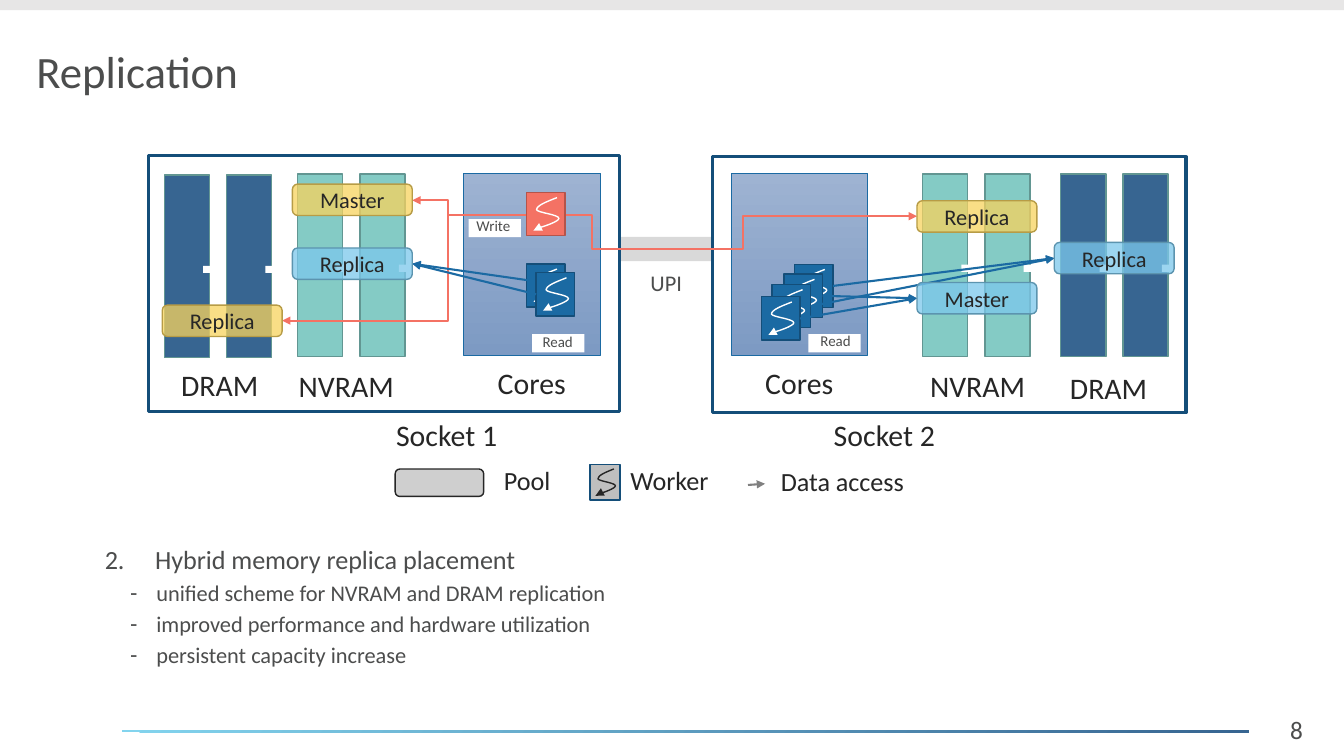
from dataclasses import dataclass
from typing import Optional

from lxml.etree import SubElement
from pptx import Presentation
from pptx.dml.color import RGBColor
from pptx.enum.shapes import MSO_CONNECTOR as Link, MSO_SHAPE as Preset
from pptx.enum.text import MSO_ANCHOR as Anchor, MSO_AUTO_SIZE as AutoSize, PP_ALIGN as Align
from pptx.oxml.ns import qn
from pptx.util import Cm, Pt

FONT = "Calibri"
WHITE = RGBColor(0xFF, 0xFF, 0xFF)
BLACK = RGBColor(0x26, 0x26, 0x26)
TEXT_GREY = RGBColor(0x4C, 0x4D, 0x4D)
BAR_GREY = RGBColor(0xE7, 0xE6, 0xE6)
LINK_GREY = RGBColor(0xD9, 0xD9, 0xD9)
LEGEND_GREY = RGBColor(0xBF, 0xBF, 0xBF)
ARROW_GREY = RGBColor(0x80, 0x80, 0x80)
NAVY = RGBColor(0x14, 0x4E, 0x79)
BLUE = RGBColor(0x1B, 0x6A, 0xA3)
DRAM_BLUE = RGBColor(0x37, 0x65, 0x91)
NVRAM_GREEN = RGBColor(0x84, 0xCB, 0xC5)
MODULE_EDGE = RGBColor(0x62, 0x96, 0x92)
CORE_TOP = RGBColor(0x9E, 0xB3, 0xD2)
CORE_BOTTOM = RGBColor(0x7D, 0x9A, 0xC3)
FOOTER_LIGHT = RGBColor(0x83, 0xD4, 0xEE)
RED = RGBColor(0xF4, 0x72, 0x64)
RED_EDGE = RGBColor(0xB5, 0x54, 0x4A)
YELLOW = RGBColor(0xF8, 0xD3, 0x5E)
YELLOW_EDGE = RGBColor(0xB7, 0x9C, 0x46)
SKY = RGBColor(0x7C, 0xC8, 0xEC)
SKY_EDGE = RGBColor(0x5C, 0x94, 0xAF)

# Squiggle inside a worker: Bezier points as fractions of its box
SQUIGGLE = [(.79, .12), (.53, .21), (.26, .3), (.26, .4), (.29, .47),
            (.84, .51), (.84, .6), (.84, .67), (.45, .79), (.34, .81)]
SQUIGGLE_TIP = (.18, .88)


@dataclass
class Label:
    text: str
    x: float
    y: float
    width: float
    height: float = 1.17
    size: float = 21.33
    color: RGBColor = BLACK
    align: Align = Align.CENTER


@dataclass
class Pool:
    text: str
    x: float
    y: float
    fill: RGBColor
    edge: RGBColor
    width: float = 3.02
    height: float = 0.79


@dataclass
class Worker:
    x: float
    y: float
    fill: RGBColor = BLUE
    edge: RGBColor = NAVY
    ink: RGBColor = WHITE
    arrow: bool = True
    width: float = 0.97
    height: float = 1.09
    pool: Optional[int] = None  # index of the pool it reads
    side: int = 3


@dataclass
class Route:
    start: tuple[float, float]
    end: tuple[float, float]
    bend: Optional[float] = None
    arrow: bool = True
    color: RGBColor = RED


def add_run(paragraph, text: str, size: float, color: RGBColor) -> None:
    run = paragraph.add_run()
    run.text = text
    run.font.name, run.font.size = FONT, Pt(size)
    run.font.color.rgb = color


def add_box(x: float, y: float, width: float, height: float, fill=None, edge=None,
            weight: float = 1, preset=Preset.RECTANGLE):
    shape = slide.shapes.add_shape(preset, Cm(x), Cm(y), Cm(width), Cm(height))
    shape.shadow.inherit = False
    if fill is None:
        shape.fill.background()
    else:
        shape.fill.solid()
        shape.fill.fore_color.rgb = fill
    if edge is None:
        shape.line.fill.background()
    else:
        shape.line.color.rgb, shape.line.width = edge, Pt(weight)
    return shape


def set_gradient(shape, first: RGBColor, last: RGBColor, angle: float) -> None:
    shape.fill.gradient()
    shape.fill.gradient_angle = angle
    for stop, color in zip(shape.fill.gradient_stops, (first, last)):
        stop.color.rgb = color


def add_label(label: Label) -> None:
    box = slide.shapes.add_textbox(Cm(label.x), Cm(label.y), Cm(label.width), Cm(label.height))
    box.text_frame.word_wrap = True
    paragraph = box.text_frame.paragraphs[0]
    paragraph.alignment = label.align
    add_run(paragraph, label.text, label.size, label.color)


def add_pool(pool: Pool):
    shape = add_box(pool.x, pool.y, pool.width, pool.height, pool.fill, pool.edge,
                    preset=Preset.ROUNDED_RECTANGLE)
    color = shape.fill._xPr.find(qn("a:solidFill"))[0]
    SubElement(color, qn("a:alpha"), val="75000")
    if pool.text:
        shape.text_frame.vertical_anchor = Anchor.MIDDLE
        shape.text_frame.paragraphs[0].alignment = Align.CENTER
        add_run(shape.text_frame.paragraphs[0], pool.text, 16, BLACK)
    return shape


def add_route(route: Route, weight: float = 1.5):
    kind = Link.STRAIGHT if route.bend is None else Link.ELBOW
    connector = slide.shapes.add_connector(kind, *map(Cm, route.start + route.end))
    connector.line.color.rgb, connector.line.width = route.color, Pt(weight)
    properties = connector._element.spPr
    if route.arrow:
        SubElement(properties.find(qn("a:ln")), qn("a:tailEnd"), type="triangle")
    if route.bend is not None:
        guides = properties.find(qn("a:prstGeom")).find(qn("a:avLst"))
        SubElement(guides, qn("a:gd"), name="adj1", fmla=f"val {round(route.bend * 100000)}")
    SubElement(properties, qn("a:effectLst"))
    return connector


def add_curve(points: list):
    """Draw an open curve: a start, then three Bezier points a segment."""
    start, *rest = [(Cm(x), Cm(y)) for x, y in points]
    builder = slide.shapes.build_freeform(*start)
    builder.add_line_segments(rest, close=False)
    curve = builder.convert_to_shape()
    outline = next(curve._element.iter(qn("a:path")))
    segments = outline.findall(qn("a:lnTo"))
    for first in range(0, len(segments), 3):
        bezier = SubElement(outline, qn("a:cubicBezTo"))
        for segment in segments[first:first + 3]:
            bezier.append(segment[0])
            outline.remove(segment)
    curve.shadow.inherit = False
    curve.fill.background()
    return curve


def add_worker(worker: Worker):
    def place(point: tuple) -> tuple[float, float]:
        return worker.x + point[0] * worker.width, worker.y + point[1] * worker.height

    box = add_box(worker.x, worker.y, worker.width, worker.height, worker.fill, worker.edge)
    squiggle = add_curve([place(point) for point in SQUIGGLE])
    squiggle.line.color.rgb, squiggle.line.width = worker.ink, Pt(1)
    if worker.arrow:
        add_route(Route(place(SQUIGGLE[-1]), place(SQUIGGLE_TIP), color=worker.ink), 0.5)
    return box


def add_read(worker: Worker, box) -> tuple:
    start = (worker.x, worker.y)
    connector = add_route(Route(start, start, color=BLUE))
    connector.begin_connect(box, worker.side)
    return connector, worker.pool


POOLS = [Pool("Master", 7.37, 4.64, YELLOW, YELLOW_EDGE),
         Pool("Replica", 7.37, 6.25, SKY, SKY_EDGE),
         Pool("Replica", 4.09, 7.69, YELLOW, YELLOW_EDGE),
         Pool("Replica", 23.11, 5.06, YELLOW, YELLOW_EDGE),
         Pool("Master", 23.11, 7.12, SKY, SKY_EDGE),
         Pool("Replica", 26.57, 6.11, SKY, SKY_EDGE)]
SOCKET_1_READERS = [Worker(13.27, 6.65, pool=1), Worker(13.51, 6.87, pool=1, side=1)]
SOCKET_2_READERS = [Worker(20.02, 6.66, arrow=False, pool=5), Worker(19.76, 6.91, arrow=False, pool=4),
                    Worker(19.46, 7.17, arrow=False, pool=5), Worker(19.19, 7.48, pool=4)]
WRITES = [Route((13.27, 5.41), (10.39, 5.05), .69), Route((13.27, 5.41), (7.11, 8.08), .32),
          Route((14.22, 5.41), (15.62, 6.27), .5, arrow=False),
          Route((15.62, 6.27), (17.96, 6.27), arrow=False),
          Route((17.96, 6.27), (23.11, 5.45), .15)]
LABELS = [Label("Socket 1", 6.93, 10.37, 8.66), Label("Socket 2", 17.96, 10.38, 8.66),
          Label("Cores", 11.68, 9.07, 3.45), Label("Cores", 18.42, 9.07, 3.45),
          Label("DRAM", 3.43, 9.12, 4.22), Label("NVRAM", 6.62, 9.13, 4.22),
          Label("NVRAM", 22.53, 9.13, 4.22), Label("DRAM", 25.83, 9.18, 4.22),
          Label("Write", 11.61, 5.33, 1.65, 0.71, 10.67, TEXT_GREY),
          Label("Read", 13.23, 8.25, 1.65, 0.71, 10.67, TEXT_GREY),
          Label("Read", 20.17, 8.23, 1.78, 0.71, 10.67, TEXT_GREY),
          Label("UPI", 15.9, 6.65, 1.78, 0.94, 16, TEXT_GREY),
          Label("8", 31.67, 17.87, 2.01, 1.02, 18, TEXT_GREY),
          Label("Pool", 12.45, 11.57, 3.35, 1.07, 18.67, align=Align.LEFT),
          Label("Worker", 15.64, 11.58, 3.15, 1.07, 18.67, align=Align.LEFT),
          Label("Data access", 19.43, 11.61, 4.62, 1.07, 18.67, align=Align.LEFT)]
POINTS = ["Hybrid memory replica placement", "unified scheme for NVRAM and DRAM replication",
          "improved performance and hardware utilization", "persistent capacity increase"]

presentation = Presentation()
presentation.slide_width, presentation.slide_height = Cm(33.87), Cm(19.05)
slide = presentation.slides.add_slide(presentation.slide_layouts[1])
title, body = slide.placeholders

# Title and list
title.left, title.top, title.width, title.height = Cm(0.66), Cm(1.07), Cm(24), Cm(1.6)
title.text_frame.vertical_anchor = Anchor.MIDDLE
heading = title.text_frame.paragraphs[0]
heading.alignment, heading.line_spacing = Align.LEFT, 0.9
add_run(heading, "Replication", 32, TEXT_GREY)
body.left, body.top, body.width, body.height = Cm(1.65), Cm(13.65), Cm(31.14), Cm(3.61)
body.text_frame.margin_left = 0
for placeholder in (title, body):
    placeholder.text_frame.auto_size = AutoSize.NONE
for index, point in enumerate(POINTS):
    paragraph = body.text_frame.add_paragraph() if index else body.text_frame.paragraphs[0]
    properties = paragraph._p.get_or_add_pPr()
    properties.set("marL", str(Cm(2.29 if index else 2.26)))
    properties.set("indent", str(Cm(-0.66 if index else -1.27)))
    if index:
        SubElement(properties, qn("a:buChar"), char="-")
    else:
        SubElement(properties, qn("a:buAutoNum"), type="arabicPeriod", startAt="2")
    paragraph.level = 2 if index else 1
    paragraph.line_spacing, paragraph.space_before = 0.9, Pt(5 if index else 0)
    add_run(paragraph, point, 16 if index else 18.67, TEXT_GREY)

# Page bands
add_box(0, 0, 33.87, 0.26, BAR_GREY)
set_gradient(add_box(3.07, 18.4, 28.4, 0.05), FOOTER_LIGHT, DRAM_BLUE, 315)

# Sockets, cores and memory modules
add_box(15.62, 5.97, 2.34, 0.61, LINK_GREY)
add_box(3.75, 3.92, 11.86, 6.45, edge=NAVY, weight=2.25)
add_box(17.95, 3.95, 11.94, 6.45, edge=NAVY, weight=2.25)
for x in (11.69, 18.42):
    set_gradient(add_box(x, 4.37, 3.45, 4.58, edge=BLUE, weight=0.5), CORE_TOP, CORE_BOTTOM, 270)
for left, top, color in ((4.14, 4.41, DRAM_BLUE), (7.5, 4.38, NVRAM_GREEN),
                         (23.25, 4.38, NVRAM_GREEN), (26.73, 4.38, DRAM_BLUE)):
    for x in (left, left + 1.57):
        add_box(x - 1.73, top + 1.73, 4.6, 1.14, color, MODULE_EDGE).rotation = 270
        add_box(x + 0.98, top + 2.29, 0.33, 0.18, WHITE)

# Writes and reads
for write in WRITES:
    add_route(write)
add_worker(Worker(13.27, 4.85, RED, RED_EDGE))
reads = [add_read(reader, add_worker(reader)) for reader in SOCKET_1_READERS]
boxes = [add_worker(reader) for reader in SOCKET_2_READERS]
reads += [add_read(reader, box) for reader, box in zip(SOCKET_2_READERS, boxes)]
for x, y in ((11.81, 5.52), (13.41, 8.42), (20.37, 8.42)):
    add_box(x, y, 1.32, 0.46, WHITE)

# Pools, joined to the reads
pool_shapes = [add_pool(pool) for pool in POOLS]
for connector, index in reads:
    connector.end_connect(pool_shapes[index], 3 if index == 1 else 1)

# Legend and labels
add_pool(Pool("", 9.96, 11.82, LEGEND_GREY, BLACK, 2.23, 0.69))
add_worker(Worker(14.87, 11.71, LEGEND_GREY, ink=BLACK, width=0.76, height=0.89))
add_route(Route((18.85, 12.22), (19.28, 12.19), color=ARROW_GREY))
for label in LABELS:
    add_label(label)

presentation.save("out.pptx")
